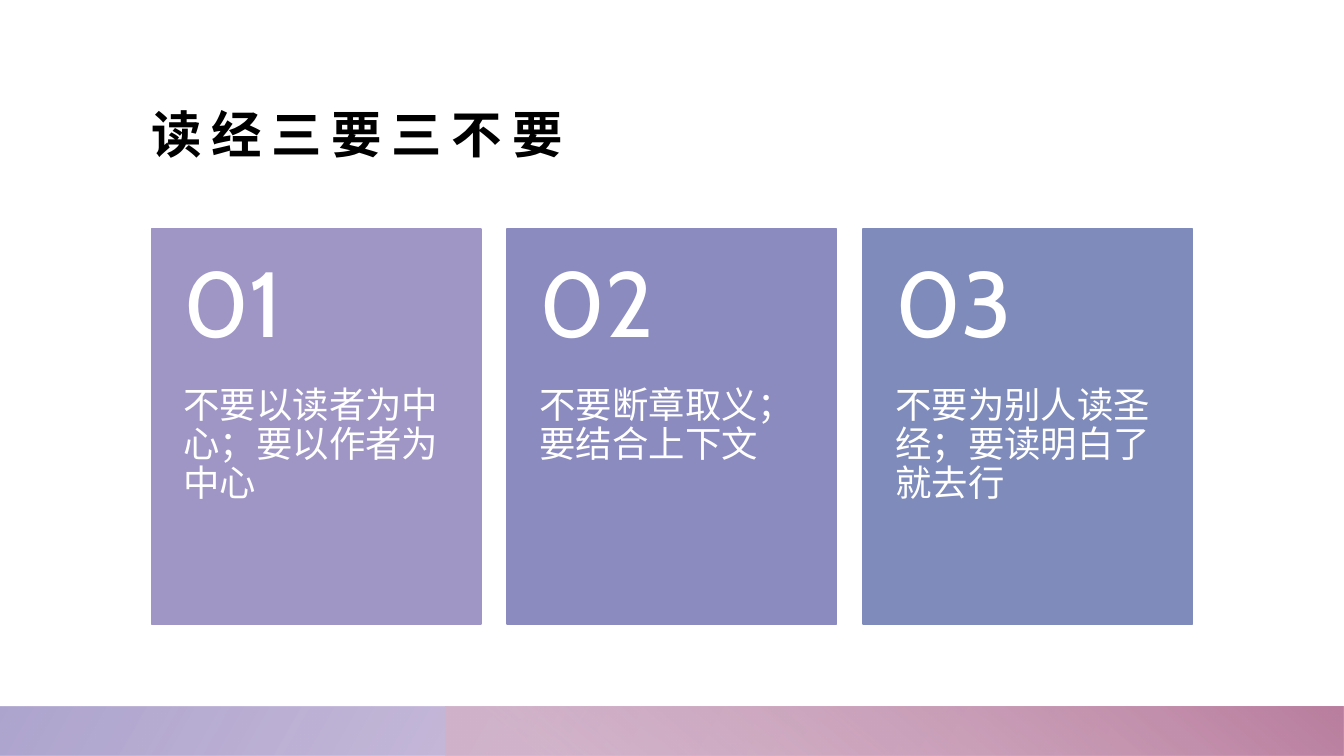
from lxml import etree
from pptx import Presentation
from pptx.dml.color import RGBColor
from pptx.enum.shapes import MSO_SHAPE
from pptx.enum.text import MSO_ANCHOR, MSO_AUTO_SIZE, PP_ALIGN
from pptx.oxml.ns import qn
from pptx.util import Inches, Pt

RECT = MSO_SHAPE.RECTANGLE
TOP, MIDDLE, BOTTOM = MSO_ANCHOR.TOP, MSO_ANCHOR.MIDDLE, MSO_ANCHOR.BOTTOM
LEFT = PP_ALIGN.LEFT
FIXED = MSO_AUTO_SIZE.NONE

WIDE, HIGH = 13.33, 7.5
FONT = "Cabin"
HUES = {
    "ink": "000000", "paper": "FFFFFF",
    "mauve": "A096C6", "violet": "8B8BC0", "blue": "7F8BBA",
    "plum": "A47FBA", "blush": "D6B2C5", "rose": "BA7F9F",
}
CARDS = [
    ("mauve", "不要以读者为中心；要以作者为中心"),
    ("violet", "不要断章取义；要结合上下文"),
    ("blue", "不要为别人读圣经；要读明白了就去行"),
]


def hue(name):
    return RGBColor.from_string(HUES[name])


def inches(box):
    return [Inches(n) for n in box]


def write(shape, text, size, color, anchor, pads, bold=False, space=1.0):
    """Put one formatted paragraph in a shape."""
    frame = shape.text_frame
    sides = ("margin_left", "margin_top", "margin_right", "margin_bottom")
    form = dict(zip(sides, inches(pads)))
    form.update(word_wrap=True, auto_size=FIXED, vertical_anchor=anchor)
    for key, value in form.items():
        setattr(frame, key, value)
    para = frame.paragraphs[0]
    para.alignment, para.line_spacing = LEFT, space
    run = para.add_run()
    run.text = text
    for key, value in {"name": FONT, "size": Pt(size), "bold": bold}.items():
        setattr(run.font, key, value)
    run.font.color.rgb = hue(color)
    return run


def block(shapes, box):
    shape = shapes.add_shape(RECT, *inches(box))
    shape.shadow.inherit = False
    return shape


def heading(slide, box):
    title = slide.shapes.title
    title.left, title.top, title.width, title.height = inches(box)
    run = write(title, "读经三要三不要", 36, "ink", BOTTOM, (0, 0, 0, 0), bold=True)
    run.font._element.set("spc", "700")


def fade(slide, box, stops, angle, turn=0):
    """Draw a mirrored strip; stops are (position, color, opacity)."""
    strip = block(slide.shapes, box)
    strip.rotation = turn
    strip.line.fill.background()
    strip._element.spPr.find(qn("a:xfrm")).set("flipH", "1")
    strip.fill.gradient()
    strip.fill.gradient_angle = 360 - angle
    for stop, (place, color, _) in zip(strip.fill.gradient_stops, stops):
        stop.position = place
        stop.color.rgb = hue(color)
    tints = strip._element.spPr.findall(".//" + qn("a:srgbClr"))
    for tint, (_, _, share) in zip(tints, stops):
        etree.SubElement(tint, qn("a:alpha")).set("val", str(share * 1000))


def footer(slide, box):
    left, top, width, height = box
    start = width * 0.3315
    fade(slide, box, [(0.14, "plum", 28), (1, "mauve", 85)], 150, turn=180)
    fade(slide, (left + start, top, width - start, height),
         [(0.09, "blush", 68), (0.99, "rose", 100)], 230)


def card(slide, box, number, color, text):
    left, top, width, height = box
    split = height * 0.4
    shapes = slide.shapes.add_group_shape().shapes
    panel = block(shapes, box)
    panel.fill.solid()
    panel.fill.fore_color.rgb = panel.line.color.rgb = hue(color)
    panel.line.width = Pt(1)
    # Body below, number above
    body = shapes.add_textbox(*inches((left, top + split, width, height - split)))
    write(body, text, 26, "paper", TOP, (0.32, 0, 0.32, 0.36), space=0.9)
    label = shapes.add_textbox(*inches((left, top, width, split)))
    write(label, f"{number:02}", 66, "paper", MIDDLE, (0.32, 0.18, 0.32, 0.18), space=0.9)


def row(slide, box, gap):
    """Share the box out equally among the cards."""
    left, top, width, height = box
    count = len(CARDS)
    each = (width - gap * (count - 1)) / count
    for i, (color, text) in enumerate(CARDS):
        card(slide, (left + i * (each + gap), top, each, height), i + 1, color, text)


def main():
    deck = Presentation()
    deck.slide_width, deck.slide_height = Inches(WIDE), Inches(HIGH)
    slide = deck.slides.add_slide(deck.slide_layouts[5])
    slide.background.fill.solid()
    slide.background.fill.fore_color.rgb = hue("paper")
    heading(slide, (1.5, 0.52, WIDE - 3, 1.1))
    footer(slide, (0, 7.01, WIDE, 0.49))
    row(slide, (1.5, 2.27, WIDE - 3, 3.92), 0.26)
    deck.save("out.pptx")


if __name__ == "__main__":
    main()
